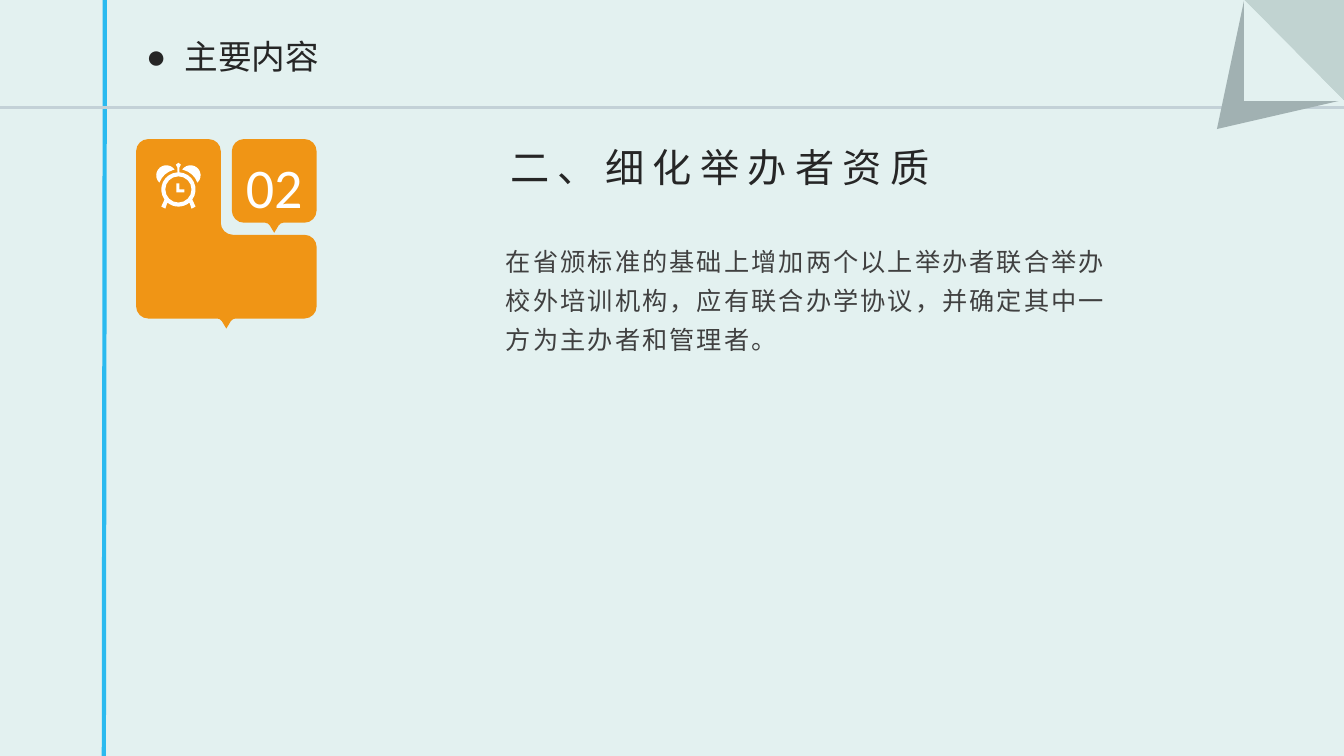
from dataclasses import dataclass
from math import ceil, cos, radians, sin, tan

from lxml.etree import SubElement
from pptx import Presentation
from pptx.dml.color import RGBColor
from pptx.enum.shapes import MSO_CONNECTOR, MSO_SHAPE
from pptx.enum.text import MSO_ANCHOR, MSO_AUTO_SIZE, PP_ALIGN
from pptx.oxml.ns import qn
from pptx.util import Inches, Pt


@dataclass(frozen=True)
class Theme:
    """Colours, fonts and type sizes of the deck."""
    page: str = "E3F1F0"
    blue: str = "2BBAEF"
    rule: str = "C3D1D7"
    fold: str = "C1D3D1"
    shade: str = "A1B1B2"
    card: str = "F09515"
    white: str = "FFFFFF"
    dark: str = "262626"
    body: str = "404040"
    hans: str = "Noto Sans CJK SC"
    latin: str = "Calibri"
    dot: str = "Arial"
    title: int = 24
    head: int = 28
    text: int = 18
    digit: int = 40


THEME = Theme()
CURVE = 0.55


def apply(target, values):
    """Set every named attribute on the target."""
    for name, value in values.items():
        setattr(target, name, value)


def write(frame, text, size, color, font, space=0, para=None, **form):
    """Fill a text frame with one styled paragraph."""
    apply(frame, form)
    line = frame.paragraphs[0]
    apply(line, para or {})
    run = line.add_run()
    run.text = text
    apply(run.font, {"size": Pt(size), "name": font, "bold": False})
    run.font.color.rgb = RGBColor.from_string(color)
    props = run._r.get_or_add_rPr()
    SubElement(props, qn("a:ea")).set("typeface", font)
    if space:
        props.set("spc", str(int(space * 100)))


def label(slide, box, *words, **form):
    """Add a text box that grows with its words."""
    shape = slide.shapes.add_textbox(*map(Inches, box))
    write(shape.text_frame, *words, auto_size=MSO_AUTO_SIZE.SHAPE_TO_FIT_TEXT, **form)


def paint(shape, color):
    """Give a shape a plain fill without line or shadow."""
    shape.shadow.inherit = False
    shape.fill.solid()
    shape.fill.fore_color.rgb = RGBColor.from_string(color)
    shape.line.fill.background()
    return shape


def outline(slide, color, *loops):
    """Draw closed loops as one shape; a third value marks a curve handle."""
    pen = None
    for loop in loops:
        spots = [(Inches(p[0]), Inches(p[1])) for p in loop]
        if pen:
            pen.move_to(*spots[0])
        else:
            pen = slide.shapes.build_freeform(*spots[0])
        pen.add_line_segments(spots[1:], close=True)
    shape = paint(pen.convert_to_shape(), color)
    marks = iter([len(p) > 2 for loop in loops for p in loop[1:]])
    steps = iter(list(shape._element.iter(qn("a:lnTo"))))
    for step, mark in zip(steps, marks):
        if mark:
            step.tag = qn("a:cubicBezTo")
            for _ in range(2):
                more = next(steps)
                next(marks)
                step.append(more[0])
                more.getparent().remove(more)
    return shape


def rule(slide, start, end, color, width):
    """Draw one straight line."""
    line = slide.shapes.add_connector(MSO_CONNECTOR.STRAIGHT, *map(Inches, start + end))
    line.line.color.rgb = RGBColor.from_string(color)
    line.line.width = Pt(width)
    SubElement(line._element.spPr, qn("a:effectLst"))


def arc(x, y, size, start, end):
    """Return a circular arc as curve points, with angles in degrees."""
    count = ceil(abs(end - start) / 90)
    step = radians((end - start) / count)
    pull = size * 4 / 3 * tan(step / 4)
    turns = [radians(start) + step * n for n in range(count + 1)]
    spots = [(x + size * cos(t), y + size * sin(t)) for t in turns]
    points = spots[:1]
    for a, b, (ax, ay), (bx, by) in zip(turns, turns[1:], spots, spots[1:]):
        points += [(ax - pull * sin(a), ay + pull * cos(a), 1),
                   (bx + pull * sin(b), by - pull * cos(b), 1), (bx, by)]
    return points


def bend(corners):
    """Round the corners of a loop given as x, y and radius."""
    points = []
    for index, (x, y, size) in enumerate(corners):
        if not size:
            points.append((x, y))
            continue
        ends = []
        for px, py, _ in (corners[index - 1], corners[(index + 1) % len(corners)]):
            far = ((px - x) ** 2 + (py - y) ** 2) ** 0.5
            ends.append(((px - x) * size / far, (py - y) * size / far))
        (ax, ay), (bx, by) = ends
        near = 1 - CURVE
        points += [(x + ax, y + ay), (x + near * ax, y + near * ay, 1),
                   (x + near * bx, y + near * by, 1), (x + bx, y + by)]
    return points


def bubble(box, notch=None):
    """Return a rounded speech card, with an optional cut at top right."""
    left, top, width, height = box
    right, base, mid, size = left + width, top + height, left + width / 2, 0.12
    side = [(right, top, size)]
    if notch:
        cut, drop = left + notch[0], top + notch[1]
        side = [(cut, top, size), (cut, drop, size), (right, drop, size)]
    tip = [(mid + 0.06, base, 0.03), (mid, base + 0.1, 0), (mid - 0.06, base, 0.03)]
    return bend([(left, top, size), *side, (right, base, size), *tip, (left, base, size)])


def clock(slide, box):
    """Draw the alarm clock inside its box."""
    left, top, width, _ = box
    x, y = left + width / 2, top + 0.27

    def shift(points):
        return [(x + dx, y + dy) for dx, dy in points]

    def flip(points):
        return [(2 * x - p[0], *p[1:]) for p in points]

    half = [(x + 0.01, y - 0.22), *arc(x, y, 0.17, -87, 36),
            *shift([(0.17, 0.17), (0.13, 0.19)]), *arc(x, y, 0.17, 50, 90)]
    knob = arc(x, y - 0.24, 0.025, 115, 425)
    bell = arc(x, y, 0.2, -20, -75) + arc(x + 0.12, y - 0.14, 0.1, -145, 43)
    hand = shift([(-0.02, -0.06), (0.01, -0.06), (0.01, 0),
                  (0.06, 0), (0.06, 0.03), (-0.02, 0.03)])
    outline(slide, THEME.white, half + flip(half)[::-1] + knob,
            arc(x, y, 0.13, 360, 0), hand, bell, flip(bell))


def frame(slide, box):
    """Draw the page colour, its rules and the folded corner."""
    left, top, width, height = box
    right, base = left + width, top + height
    paint(slide.shapes.add_shape(MSO_SHAPE.RECTANGLE, *map(Inches, box)), THEME.page)
    rule(slide, (left + 1.04, top), (left + 1.03, base), THEME.blue, 3)
    rule(slide, (left, top + 1.07), (right, top + 1.07), THEME.rule, 2.25)
    fold, low = right - 0.99, top + 1
    outline(slide, THEME.fold, [(fold, top), (right, top), (right, low)])
    outline(slide, THEME.shade, [(fold, top), (fold - 0.27, top + 1.28),
                                 (right, low - 0.01), (fold, low)])
    outline(slide, THEME.page, [(fold, top), (fold, low), (right, low)])


def title(slide, box):
    """Place the bulleted page title in front of the page."""
    shape = slide.shapes.title
    shape._element.getparent().append(shape._element)
    apply(shape, dict(zip(("left", "top", "width", "height"), map(Inches, box))))
    props = shape.text_frame.paragraphs[0]._p.get_or_add_pPr()
    apply(props, {"marL": Inches(0.38), "indent": Inches(-0.38)})
    SubElement(props, qn("a:buFont")).set("typeface", THEME.dot)
    SubElement(props, qn("a:buChar")).set("char", "●")
    for name, size in (("marL", 0.38), ("indent", -0.38)):
        props.set(name, str(Inches(size)))
    write(shape.text_frame, "主要内容", THEME.title, THEME.dark, THEME.hans,
          para={"alignment": PP_ALIGN.LEFT}, vertical_anchor=MSO_ANCHOR.TOP,
          word_wrap=True, auto_size=MSO_AUTO_SIZE.SHAPE_TO_FIT_TEXT)


def badge(slide, box):
    """Draw the card with the clock and the section number."""
    left, top, width, _ = box
    cell = 0.84
    outline(slide, THEME.card, bubble(box, (cell, 0.95)))
    clock(slide, (left + 0.2, top + 0.23, 0.44, 0.47))
    tile = outline(slide, THEME.card, bubble((left + width - cell, top, cell, 0.83)))
    write(tile.text_frame, "02", THEME.digit, THEME.white, THEME.latin,
          para={"alignment": PP_ALIGN.CENTER}, vertical_anchor=MSO_ANCHOR.MIDDLE,
          word_wrap=True)


def topic(slide, box):
    """Place the section heading and its text."""
    left, top, width, _ = box
    label(slide, (left, top, 4.44, 0.57), "二、细化举办者资质",
          THEME.head, THEME.dark, THEME.hans, 6,
          para={"alignment": PP_ALIGN.CENTER}, word_wrap=False)
    label(slide, (left, top + 0.93, width, 1.28),
          "在省颁标准的基础上增加两个以上举办者联合举办校外培训机构，应有联合办学协议，并确定其中一方为主办者和管理者。",
          THEME.text, THEME.body, THEME.hans, 1.5, para={"line_spacing": 1.3}, word_wrap=True)


def main():
    """Build and save the slide."""
    deck = Presentation()
    apply(deck, {"slide_width": Inches(13.33), "slide_height": Inches(7.5)})
    slide = deck.slides.add_slide(deck.slide_layouts[5])
    frame(slide, (0, 0, 13.33, 7.5))
    title(slide, (1.35, 0.31, 3.57, 0.5))
    badge(slide, (1.35, 1.38, 1.79, 1.78))
    topic(slide, (4.92, 1.37, 6.22, 2.2))
    deck.save("out.pptx")


if __name__ == "__main__":
    main()
